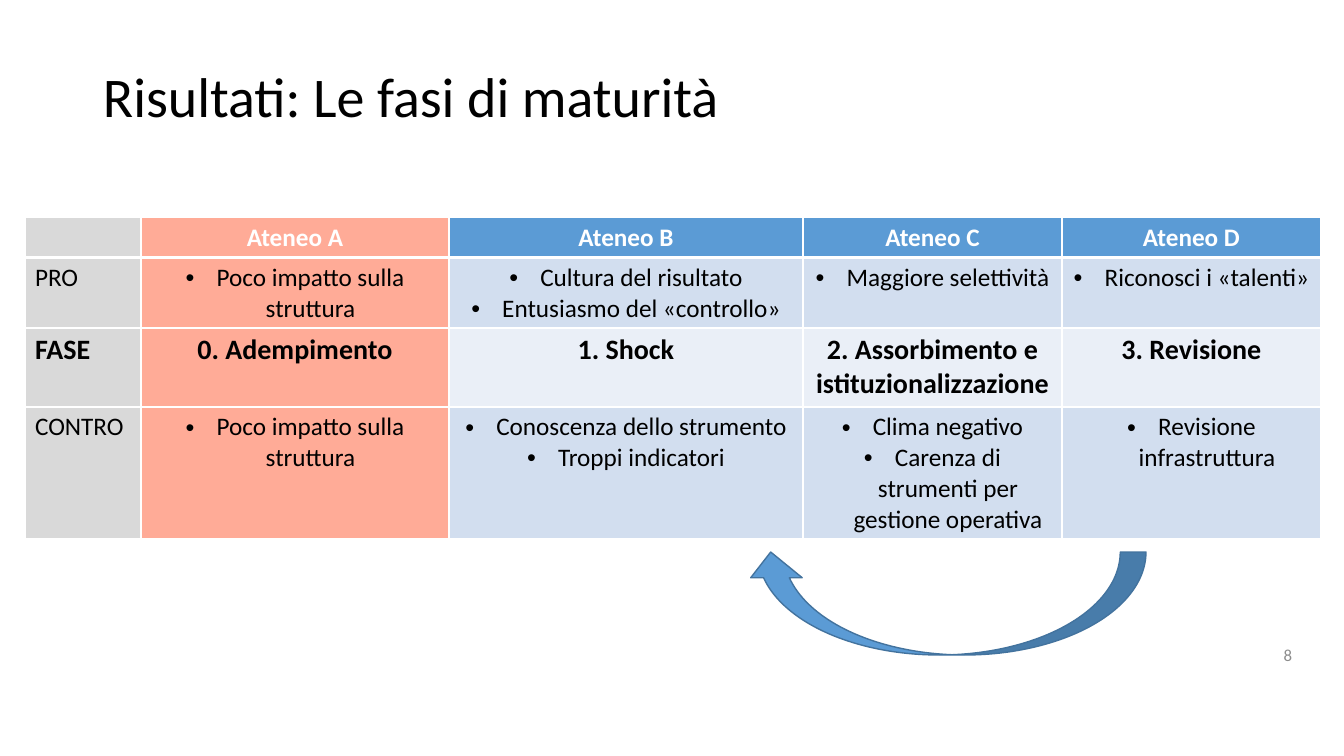
import pptx
import pptx.util
import pptx.oxml
import pptx.oxml.ns
import pptx.dml.color
import pptx.enum.shapes
import pptx.enum.text
from lxml import etree

ALIGN = pptx.enum.text.PP_ALIGN
MIDDLE = pptx.enum.text.MSO_ANCHOR.MIDDLE
SCALE = 914400 / 100.8  # EMU in one px
THEME = {
    "font": "Calibri",
    "black": "000000", "white": "FFFFFF", "number": "8C8C8C",
    "label": "D9D9D9", "salmon": "FFAB97", "blue": "5B9BD5",
    "band": "D2DEEF", "phase": "EAEFF7", "outline": "43739E",
    "title_pt": 40, "phase_pt": 20, "body_pt": 18, "number_pt": 12,
}


def px(*lengths):
    return [pptx.util.Emu(round(n * SCALE)) for n in lengths]


def write(tf, text, size="body_pt", color="black", bold=False,
          align=ALIGN.LEFT, spacing=None, bullet=False):
    """Write one paragraph for each line of text."""
    tf.word_wrap = True
    for i, line in enumerate(text.split("\n")):
        p = tf.add_paragraph() if i else tf.paragraphs[0]
        p.alignment = align
        p.line_spacing = spacing
        if bullet:
            indent = px(31)[0]
            pPr = p._p.get_or_add_pPr()
            pPr.set("marL", str(indent))
            pPr.set("indent", str(-indent))
            etree.SubElement(pPr, pptx.oxml.ns.qn("a:buFont")).set("typeface", "Arial")
            etree.SubElement(pPr, pptx.oxml.ns.qn("a:buChar")).set("char", "•")
        r = p.add_run()
        r.text = line
        r.font.name = THEME["font"]
        r.font.size = pptx.util.Pt(THEME[size])
        r.font.bold = bold
        r.font.color.rgb = pptx.dml.color.RGBColor.from_string(THEME[color])


prs = pptx.Presentation()
prs.slide_width, prs.slide_height = px(1344, 756)
s = prs.slides.add_slide(prs.slide_layouts[6])

# Title and slide number
tf = s.shapes.add_textbox(*px(93, 26, 1159, 146)).text_frame
tf.vertical_anchor = MIDDLE
write(tf, "Risultati: Le fasi di maturità", size="title_pt", spacing=0.9)

tf = s.shapes.add_textbox(*px(1000, 635, 302, 40)).text_frame
tf.vertical_anchor = MIDDLE
write(tf, "8", size="number_pt", color="number", align=ALIGN.RIGHT)

# Table of maturity phases
rows = [
    ["", "Ateneo A", "Ateneo B", "Ateneo C", "Ateneo D"],
    ["PRO", "Poco impatto sulla struttura",
     "Cultura del risultato\nEntusiasmo del «controllo»",
     "Maggiore selettività", "Riconosci i «talenti»"],
    ["FASE", "0. Adempimento", "1. Shock",
     "2. Assorbimento e istituzionalizzazione", "3. Revisione"],
    ["CONTRO", "Poco impatto sulla struttura",
     "Conoscenza dello strumento\nTroppi indicatori",
     "Clima negativo\nCarenza di strumenti per gestione operativa",
     "Revisione infrastruttura"],
]
col_widths = [116, 308, 354, 259, 259]
row_heights = [39, 70, 79, 132]
row_fills = ["blue", "band", "phase", "band"]
HEADER, PHASE = 0, 2

table = s.shapes.add_table(
    len(rows), len(col_widths),
    *px(25, 217, sum(col_widths), sum(row_heights))).table
table.horz_banding = False
for col, width in zip(table.columns, px(*col_widths)):
    col.width = width
for row, height in zip(table.rows, px(*row_heights)):
    row.height = height

for i, texts in enumerate(rows):
    for j, text in enumerate(texts):
        cell = table.cell(i, j)

        # White rules, thicker under the header
        tcPr = cell._tc.get_or_add_tcPr()
        for side in "LRTB":
            thick = (i, side) in [(HEADER, "B"), (HEADER + 1, "T")]
            tcPr.append(pptx.oxml.parse_xml(
                f'<a:ln{side} {pptx.oxml.ns.nsdecls("a")} '
                f'w="{pptx.util.Pt(3 if thick else 1)}"><a:solidFill>'
                f'<a:srgbClr val="{THEME["white"]}"/></a:solidFill></a:ln{side}>'))

        fill = {0: "label", 1: "salmon"}.get(j, row_fills[i])
        cell.fill.solid()
        cell.fill.fore_color.rgb = pptx.dml.color.RGBColor.from_string(THEME[fill])
        if text:
            write(cell.text_frame, text,
                  size="phase_pt" if i == PHASE else "body_pt",
                  color="white" if i == HEADER else "black",
                  bold=i in (HEADER, PHASE),
                  align=ALIGN.CENTER if j else ALIGN.LEFT,
                  bullet=j > 0 and i not in (HEADER, PHASE))

# Arrow back from Ateneo D to Ateneo B
sp = s.shapes.add_shape(pptx.enum.shapes.MSO_SHAPE.CURVED_LEFT_ARROW,
                        *px(894, 403, 103, 401))
sp.rotation = 90
sp.shadow.inherit = False
sp.fill.solid()
sp.fill.fore_color.rgb = pptx.dml.color.RGBColor.from_string(THEME["blue"])
sp.line.color.rgb = pptx.dml.color.RGBColor.from_string(THEME["outline"])
sp.line.width = pptx.util.Pt(1)

prs.save("out.pptx")
